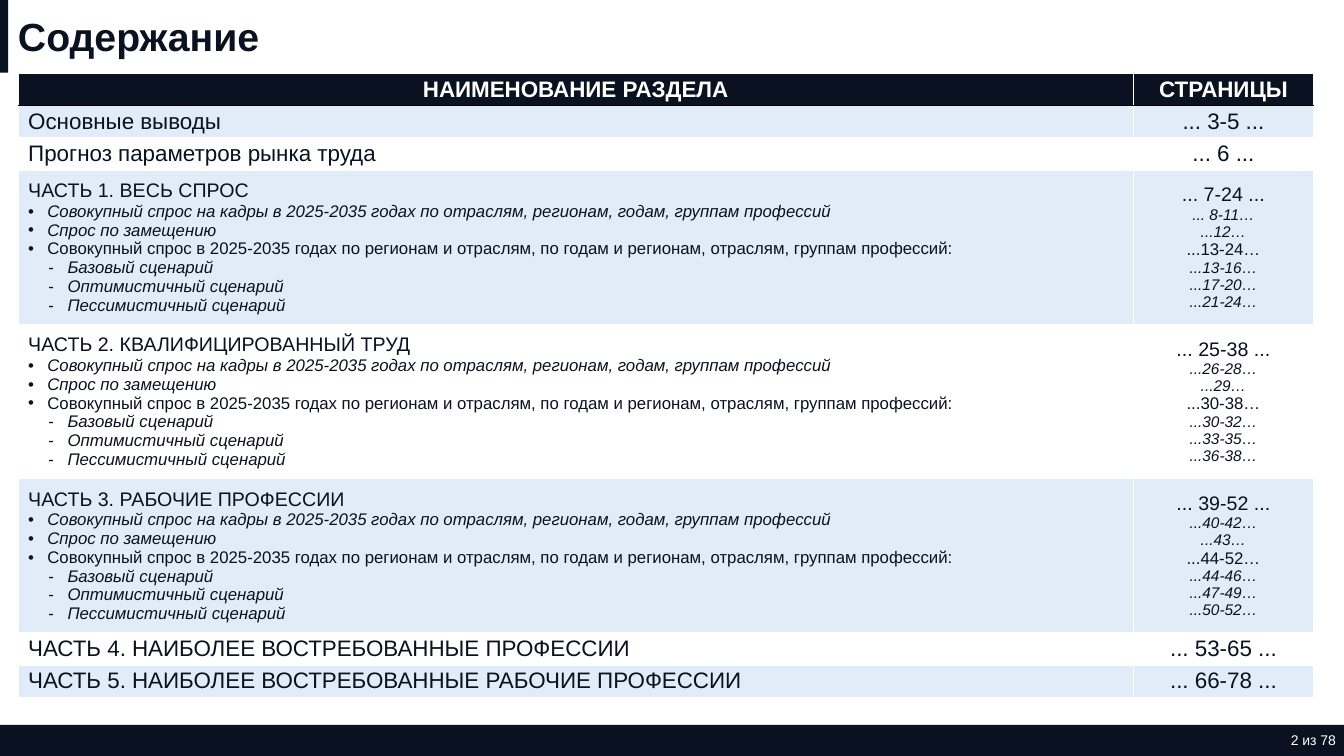
from dataclasses import dataclass

from lxml import etree
from pptx import Presentation
from pptx.dml.color import RGBColor
from pptx.enum.shapes import MSO_SHAPE
from pptx.enum.text import MSO_ANCHOR, PP_ALIGN
from pptx.oxml.ns import qn
from pptx.util import Inches, Pt

RECTANGLE = MSO_SHAPE.RECTANGLE
MIDDLE = MSO_ANCHOR.MIDDLE
LEFT, CENTER, RIGHT = PP_ALIGN.LEFT, PP_ALIGN.CENTER, PP_ALIGN.RIGHT


@dataclass(frozen=True)
class Theme:
    font: str = "Arial"
    navy: str = "0A1121"
    white: str = "FFFFFF"
    black: str = "000000"
    band: str = "CEE1F3"
    band_opacity: int = 62
    title: int = 28
    row: int = 16
    heading: int = 14
    item: int = 12
    item_pages: int = 11
    footer: int = 10


THEME = Theme()


@dataclass(frozen=True)
class Line:
    text: str
    size: int = THEME.row
    italic: bool = False
    bold: bool = False
    color: str = THEME.navy
    bullet: str = ""
    indent: float = 0


@dataclass(frozen=True)
class Section:
    names: list[Line]
    pages: list[Line]
    height: float = 0.32


# Items shared by the first three parts
BULLET_STEP = 0.19
PART_ITEMS = [
    Line("Совокупный спрос на кадры в 2025-2035 годах по отраслям, регионам, годам, "
         "группам профессий", THEME.item, italic=True, bullet="•", indent=0.19),
    Line("Спрос по замещению", THEME.item, italic=True, bullet="•", indent=0.19),
    Line("Совокупный спрос в 2025-2035 годах по регионам и отраслям, по годам и регионам, "
         "отраслям, группам профессий:", THEME.item, bullet="•", indent=0.19),
] + [
    Line(f"{scenario} сценарий", THEME.item, italic=True, bullet="-", indent=0.39)
    for scenario in ("Базовый", "Оптимистичный", "Пессимистичный")
]


def simple_section(name: str, pages: str) -> Section:
    return Section([Line(name)], [Line(pages)])


def part_section(name: str, pages: str, item_pages: list[str]) -> Section:
    page_lines = [Line(pages, THEME.heading)]
    for item, text in zip(PART_ITEMS, item_pages):
        size = THEME.item_pages if item.italic else THEME.item
        page_lines.append(Line(text, size, italic=item.italic))
    return Section([Line(name, THEME.heading), *PART_ITEMS], page_lines, 1.53)


HEADER = Section(
    [Line("НАИМЕНОВАНИЕ РАЗДЕЛА", bold=True, color=THEME.white)],
    [Line("СТРАНИЦЫ", bold=True, color=THEME.white)],
)
SECTIONS = [
    HEADER,
    simple_section("Основные выводы", "... 3-5 ..."),
    simple_section("Прогноз параметров рынка труда", "... 6 ..."),
    part_section("ЧАСТЬ 1. ВЕСЬ СПРОС", "... 7-24 ...",
                 ["... 8-11…", "...12…", "...13-24…", "...13-16…", "...17-20…", "...21-24…"]),
    part_section("ЧАСТЬ 2. КВАЛИФИЦИРОВАННЫЙ ТРУД", "... 25-38 ...",
                 ["...26-28…", "...29…", "...30-38…", "...30-32…", "...33-35…", "...36-38…"]),
    part_section("ЧАСТЬ 3. РАБОЧИЕ ПРОФЕССИИ", "... 39-52 ...",
                 ["...40-42…", "...43…", "...44-52…", "...44-46…", "...47-49…", "...50-52…"]),
    simple_section("ЧАСТЬ 4. НАИБОЛЕЕ ВОСТРЕБОВАННЫЕ ПРОФЕССИИ", "... 53-65 ..."),
    simple_section("ЧАСТЬ 5. НАИБОЛЕЕ ВОСТРЕБОВАННЫЕ РАБОЧИЕ ПРОФЕССИИ", "... 66-78 ..."),
]
COLUMN_WIDTHS = (11.06, 1.79)


def write_lines(frame, lines: list[Line], align: PP_ALIGN) -> None:
    for index, line in enumerate(lines):
        para = frame.paragraphs[0] if index == 0 else frame.add_paragraph()
        para.text = line.text
        para.alignment = align
        if line.bullet:
            properties = para._p.get_or_add_pPr()
            properties.set("marL", str(Inches(line.indent)))
            properties.set("indent", str(-Inches(BULLET_STEP)))
            etree.SubElement(properties, qn("a:buFont"), typeface=THEME.font)
            etree.SubElement(properties, qn("a:buChar"), char=line.bullet)
        font = para.font
        font.name, font.size = THEME.font, Pt(line.size)
        font.bold, font.italic = line.bold, line.italic
        font.color.rgb = RGBColor.from_string(line.color)


def add_bar(page, left: float, top: float, width: float, height: float) -> None:
    bar = page.shapes.add_shape(RECTANGLE, Inches(left), Inches(top), Inches(width), Inches(height))
    bar.shadow.inherit = False
    bar.fill.solid()
    bar.fill.fore_color.rgb = RGBColor.from_string(THEME.navy)
    bar.line.fill.background()


def add_label(page, left: float, top: float, width: float, height: float,
              line: Line, align: PP_ALIGN, right_inset: float = 0.1) -> None:
    box = page.shapes.add_textbox(Inches(left), Inches(top), Inches(width), Inches(height))
    frame = box.text_frame
    frame.word_wrap = True
    frame.vertical_anchor = MIDDLE
    frame.margin_right = Inches(right_inset)
    write_lines(frame, [line], align)


def set_borders(cell, top: str, bottom: str) -> None:
    properties = cell._tc.get_or_add_tcPr()
    colors = {"L": THEME.white, "R": THEME.white, "T": top, "B": bottom}
    for index, (side, color) in enumerate(colors.items()):
        border = etree.Element(qn(f"a:ln{side}"), w=str(Pt(1)))
        fill = etree.SubElement(border, qn("a:solidFill"))
        etree.SubElement(fill, qn("a:srgbClr"), val=color)
        properties.insert(index, border)


def fill_cell(cell, row: int) -> None:
    if row > 0 and row % 2 == 0:
        cell.fill.background()
        return
    cell.fill.solid()
    cell.fill.fore_color.rgb = RGBColor.from_string(THEME.band if row else THEME.navy)
    if row:
        color = cell._tc.tcPr.find(f"{qn('a:solidFill')}/{qn('a:srgbClr')}")
        etree.SubElement(color, qn("a:alpha"), val=str(THEME.band_opacity * 1000))


def add_contents_table(page) -> None:
    height = sum(section.height for section in SECTIONS)
    table = page.shapes.add_table(
        len(SECTIONS), len(COLUMN_WIDTHS), Inches(0.18), Inches(0.73),
        Inches(sum(COLUMN_WIDTHS)), Inches(height)).table
    table.horz_banding = False
    for column, width in zip(table.columns, COLUMN_WIDTHS):
        column.width = Inches(width)
    for row, section in enumerate(SECTIONS):
        table.rows[row].height = Inches(section.height)
        for column, lines in enumerate((section.names, section.pages)):
            cell = table.cell(row, column)
            cell.vertical_anchor = MIDDLE
            cell.margin_left = cell.margin_right = Inches(0.1)
            cell.margin_top = cell.margin_bottom = Inches(0.02)
            fill_cell(cell, row)
            set_borders(cell, top=THEME.black if row == 1 else THEME.white,
                        bottom=THEME.black if row == 0 else THEME.white)
            write_lines(cell.text_frame, lines, LEFT if row and column == 0 else CENTER)


def main() -> None:
    deck = Presentation()
    deck.slide_width, deck.slide_height = Inches(13.33), Inches(7.5)
    page = deck.slides.add_slide(deck.slide_layouts[6])

    # Footer band and title accent
    add_bar(page, 0, 7.19, 13.33, 0.31)
    add_bar(page, 0, 0, 0.08, 0.72)

    # Title and page number
    add_label(page, 0.08, 0, 13.25, 0.72,
              Line("Содержание", THEME.title, bold=True), LEFT)
    add_label(page, 12.04, 7.19, 1.21, 0.31,
              Line("2 из 78", THEME.footer, color=THEME.white), RIGHT, right_inset=0)

    # Table of contents
    add_contents_table(page)
    deck.save("out.pptx")


if __name__ == "__main__":
    main()
